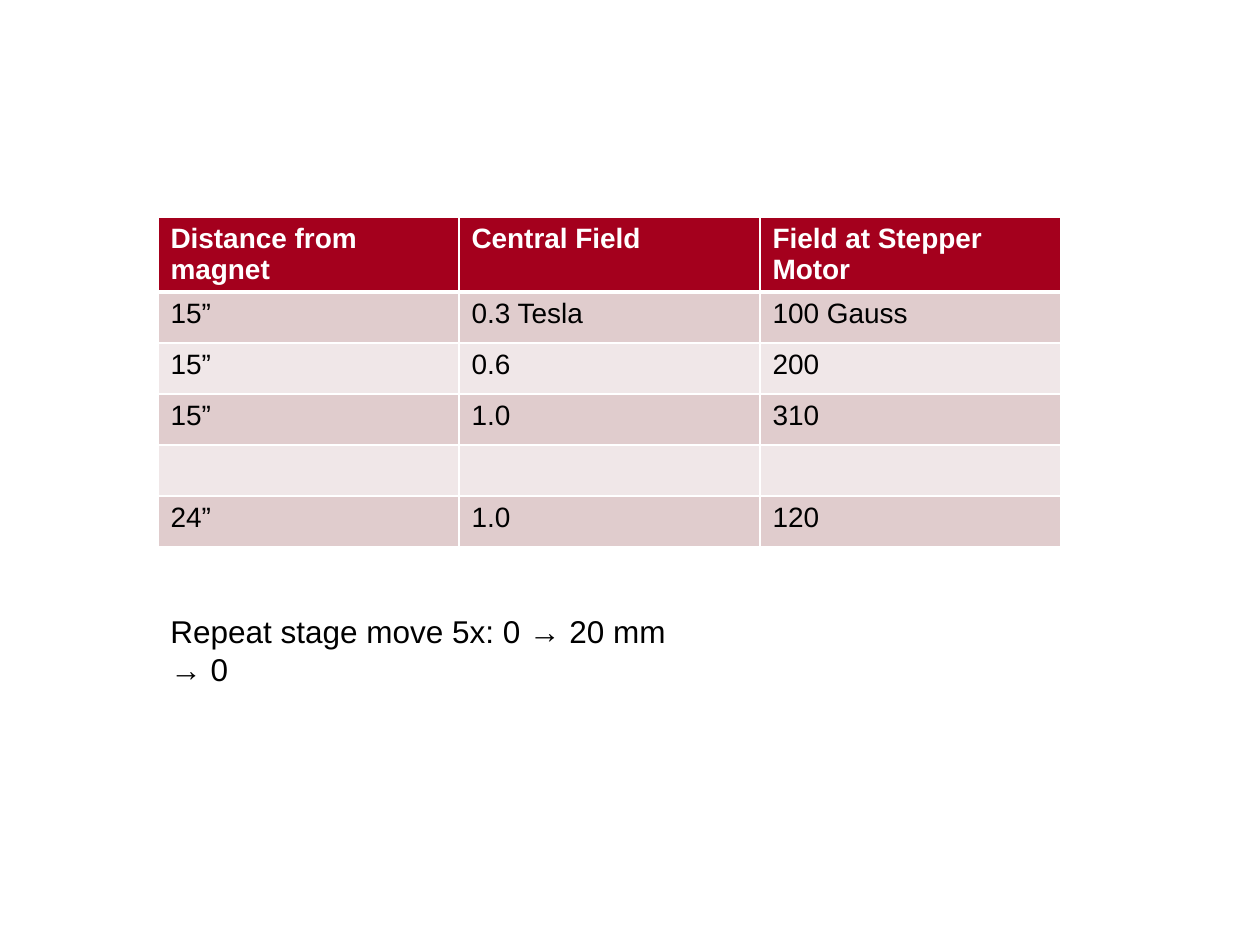
import pptx
import pptx.dml.color
import pptx.enum.text
import pptx.oxml.ns
import pptx.util
from lxml import etree

PX = 914400 / 126

WHITE = pptx.dml.color.RGBColor(0xFF, 0xFF, 0xFF)
BLACK = pptx.dml.color.RGBColor(0x00, 0x00, 0x00)
CRIMSON = pptx.dml.color.RGBColor(0xA4, 0x00, 0x1D)
ROSE = pptx.dml.color.RGBColor(0xE0, 0xCC, 0xCD)
PALE_ROSE = pptx.dml.color.RGBColor(0xF0, 0xE7, 0xE8)

HEADER_HEIGHT = 75
ROW_HEIGHT = 51
FIELD_ROWS = [
    ("Distance from magnet", "Central Field", "Field at Stepper Motor"),
    ("15”", "0.3 Tesla", "100 Gauss"),
    ("15”", "0.6", "200"),
    ("15”", "1.0", "310"),
    ("", "", ""),
    ("24”", "1.0", "120"),
]


def emu(px):
    return pptx.util.Emu(round(px * PX))


def write_text(frame, text, size=16, color=BLACK, bold=False):
    span = frame.paragraphs[0].add_run()
    span.text = text
    span.font.name = "Arial"
    span.font.size = pptx.util.Pt(size)
    span.font.bold = bold
    span.font.color.rgb = color


def set_borders(cell, **widths):
    """Draw white borders; widths in points are keyed by side: L, R, T, B."""
    properties = cell._tc.get_or_add_tcPr()
    qn = pptx.oxml.ns.qn
    for side, width in widths.items():
        line = etree.SubElement(properties, qn(f"a:ln{side}"), w=str(pptx.util.Pt(width)))
        fill = etree.SubElement(line, qn("a:solidFill"))
        etree.SubElement(fill, qn("a:srgbClr"), val=str(WHITE))


def add_field_table(page, left, top, width):
    row_count, column_count = len(FIELD_ROWS), len(FIELD_ROWS[0])
    height = HEADER_HEIGHT + ROW_HEIGHT * (row_count - 1)
    table = page.shapes.add_table(
        row_count, column_count, emu(left), emu(top), emu(width), emu(height)
    ).table
    for column in table.columns:
        column.width = emu(width / column_count)
    for r, values in enumerate(FIELD_ROWS):
        header = r == 0
        table.rows[r].height = emu(HEADER_HEIGHT if header else ROW_HEIGHT)
        for c, value in enumerate(values):
            cell = table.cell(r, c)
            set_borders(cell, L=1, R=1, T=3 if r == 1 else 1, B=3 if header else 1)
            cell.fill.solid()
            cell.fill.fore_color.rgb = CRIMSON if header else ROSE if r % 2 else PALE_ROSE
            if value:
                write_text(cell.text_frame, value,
                           color=WHITE if header else BLACK, bold=header)


def add_note(page, left, top, width, height):
    box = page.shapes.add_textbox(emu(left), emu(top), emu(width), emu(height))
    box.text_frame.word_wrap = True
    box.text_frame.auto_size = pptx.enum.text.MSO_AUTO_SIZE.SHAPE_TO_FIT_TEXT
    write_text(box.text_frame, "Repeat stage move 5x: 0 → 20 mm → 0", size=18)


def main():
    deck = pptx.Presentation()
    deck.slide_width, deck.slide_height = emu(1260), emu(945)
    page = deck.slides.add_slide(deck.slide_layouts[6])
    add_field_table(page, 158, 217, 903)
    add_note(page, 158, 606, 538, 50)
    deck.save("out.pptx")


if __name__ == "__main__":
    main()
